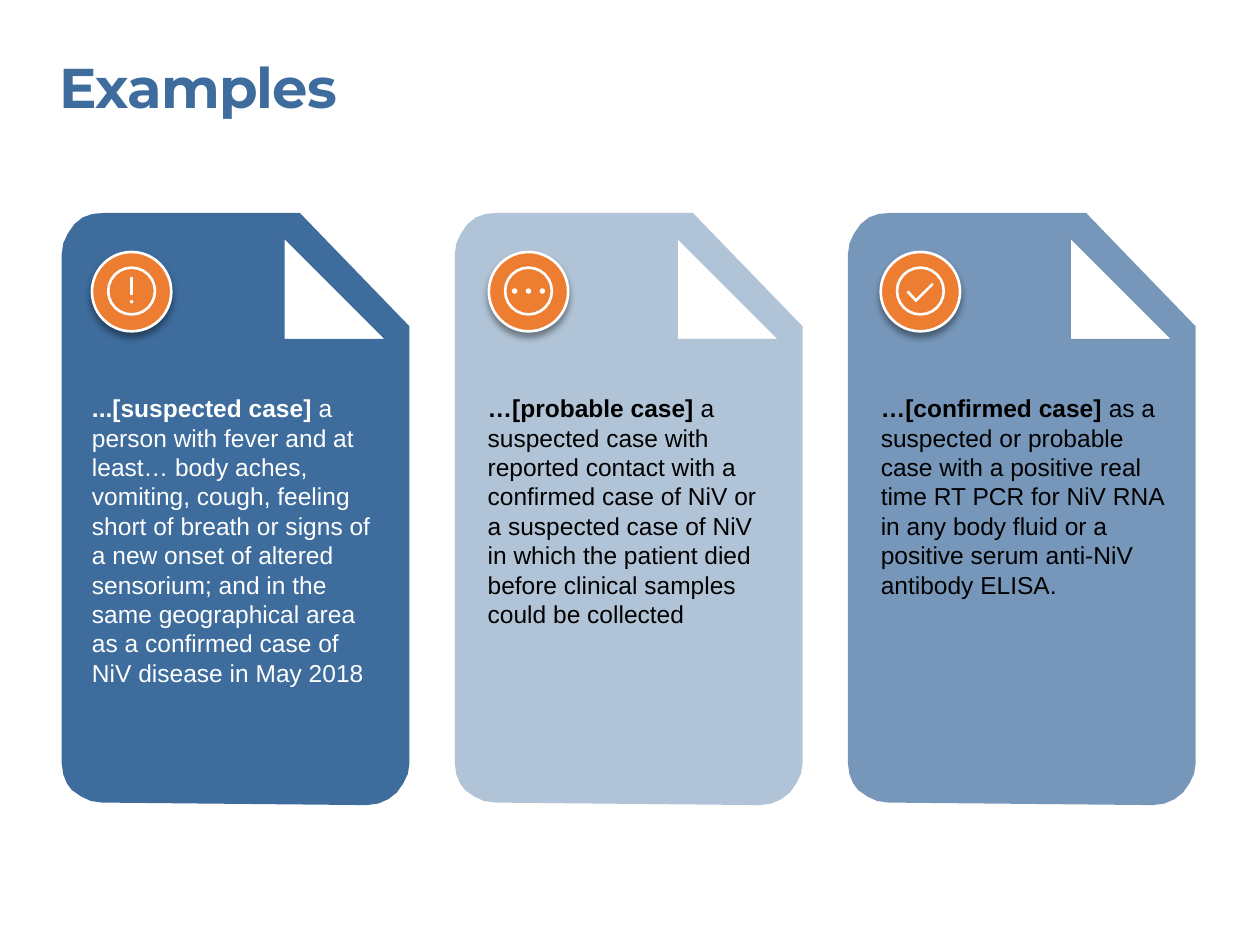
from dataclasses import dataclass
from math import cos, pi, sin

from lxml.etree import SubElement
from pptx import Presentation
from pptx.dml.color import RGBColor
from pptx.enum.shapes import MSO_SHAPE
from pptx.enum.text import MSO_ANCHOR, MSO_AUTO_SIZE, PP_ALIGN
from pptx.oxml.ns import qn
from pptx.util import Pt

PX = 9144


@dataclass(frozen=True)
class Theme:
    blue: RGBColor = RGBColor(0x3D, 0x6C, 0x9D)
    orange: RGBColor = RGBColor(0xED, 0x7D, 0x31)
    white: RGBColor = RGBColor(255, 255, 255)
    black: RGBColor = RGBColor(0, 0, 0)
    heading: str = "Montserrat"
    body: str = "Arial"
    title_size: int = 32
    body_size: int = 14


THEME = Theme()
CARD_LEFT, CARD_PITCH = 49, 312
BADGE_TOP, BADGE_SIZE = 200, 63

CARD_OUTLINE = [
    (32, 637),
    (22, 637, 16, 633, 8, 627), (4, 623, 0, 615, 0, 606),
    (0, 202),
    (0, 192, 4, 186, 10, 178), (16, 171, 24, 169, 34, 169),
    (189, 169), (276, 259), (276, 606),
    (276, 615, 272, 621, 266, 629), (260, 635, 252, 639, 242, 639),
]
FOLD = [(177, 269), (256, 269), (177, 190)]


def px(*values):
    return [round(v * PX) for v in values]


def circle(x, y, radius, steps):
    angles = [2 * pi * i / steps for i in range(steps)]
    return [(x + radius * cos(a), y + radius * sin(a)) for a in angles]


def flatten(segments, steps=3):
    points = []
    for seg in segments:
        if len(seg) == 2:
            points.append(seg)
            continue
        ctrl = [points[-1], seg[:2], seg[2:4], seg[4:]]
        for i in range(1, steps + 1):
            t = i / steps
            weights = ((1 - t) ** 3, 3 * t * (1 - t) ** 2, 3 * t * t * (1 - t), t ** 3)
            points.append(tuple(sum(w * c[k] for w, c in zip(weights, ctrl)) for k in (0, 1)))
    return points


RING = [circle(0, 0, radius, 24) for radius in (19.6, 17.5)]
EXCLAMATION = [[(-1.1, -11), (1.1, -11), (1.1, 3), (-1.1, 3)], circle(0, 8.5, 1.4, 8)]
ELLIPSIS = [circle(x, 0, 2.2, 8) for x in (-11, 0, 11)]
CHECK = [[(-3.5, 9), (10.5, -5), (9.3, -6.5), (-3.5, 6), (-9.5, -0.5), (-11, 1)]]

CASES = [
    {"alpha": 100, "color": THEME.white, "badge": 73, "text": 73, "height": 236,
     "glyph": EXCLAMATION, "term": "...[suspected case] ",
     "definition": "a person with fever and at least… body aches, vomiting, cough, "
                   "feeling short of breath or signs of a new onset of altered sensorium; "
                   "and in the same geographical area as a confirmed case of NiV disease "
                   "in May 2018"},
    {"alpha": 40, "color": THEME.black, "badge": 388, "text": 387, "height": 188,
     "glyph": ELLIPSIS, "term": "…[probable case] ",
     "definition": "a suspected case with reported contact with a confirmed case of NiV "
                   "or a suspected case of NiV in which the patient died before clinical "
                   "samples could be collected"},
    {"alpha": 70, "color": THEME.black, "badge": 699, "text": 699, "height": 165,
     "glyph": CHECK, "term": "…[confirmed case] ",
     "definition": "as a suspected or probable case with a positive real time RT PCR for "
                   "NiV RNA in any body fluid or a positive serum anti-NiV antibody ELISA."},
]


def set_fill(sp, color, alpha=100):
    sp.shadow.inherit = False
    sp.fill.solid()
    sp.fill.fore_color.rgb = color
    if alpha < 100:
        clr = sp.fill._xPr.find(qn("a:solidFill"))[0]
        SubElement(clr, qn("a:alpha"), val=str(alpha * 1000))


def add_outline(s, contours, x, y, color, alpha=100):
    contours = [[px(x + a, y + b) for a, b in c] for c in contours]
    builder = s.shapes.build_freeform(*contours[0][0])
    builder.add_line_segments(contours[0][1:], close=True)
    for contour in contours[1:]:
        builder.move_to(*contour[0])
        builder.add_line_segments(contour[1:], close=True)
    sp = builder.convert_to_shape()
    set_fill(sp, color, alpha)
    sp.line.fill.background()


def set_frame(tf):
    margins = dict.fromkeys(("margin_left", "margin_top", "margin_right", "margin_bottom"), 0)
    values = {"word_wrap": True, "auto_size": MSO_AUTO_SIZE.NONE,
              "vertical_anchor": MSO_ANCHOR.TOP, **margins}
    for name, value in values.items():
        setattr(tf, name, value)


def add_run(p, text, color, **formats):
    r = p.add_run()
    r.text = text
    r.font.color.rgb = color
    for name, value in formats.items():
        setattr(r.font, name, value)
    return r


def set_title(s, text):
    sp = s.shapes.title
    sp.left, sp.top, sp.width, sp.height = px(47, 42, 810, 54)
    set_frame(sp.text_frame)
    p = sp.text_frame.paragraphs[0]
    p.alignment = PP_ALIGN.LEFT
    r = add_run(p, text, THEME.blue, name=THEME.heading, size=Pt(THEME.title_size), bold=True)
    r.font._element.set("spc", "-50")


def add_definition(s, case):
    sp = s.shapes.add_textbox(*px(case["text"], 312, 228, case["height"]))
    set_frame(sp.text_frame)
    p = sp.text_frame.paragraphs[0]
    for part, bold in (("term", True), ("definition", False)):
        add_run(p, case[part], case["color"],
                name=THEME.body, size=Pt(THEME.body_size), bold=bold)


def add_badge(s, left, glyph):
    sp = s.shapes.add_shape(MSO_SHAPE.OVAL, *px(left, BADGE_TOP, BADGE_SIZE, BADGE_SIZE))
    set_fill(sp, THEME.orange)
    sp.line.color.rgb = THEME.white
    sp.line.width = Pt(1.5)
    effects = sp._element.spPr.find(qn("a:effectLst"))
    shadow = SubElement(effects, qn("a:outerShdw"), blurRad=str(Pt(4)), dist=str(Pt(3)),
                        dir="5400000", algn="t", rotWithShape="0")
    clr = SubElement(shadow, qn("a:srgbClr"), val=str(THEME.black))
    SubElement(clr, qn("a:alpha"), val="40000")
    half = BADGE_SIZE / 2
    add_outline(s, RING + glyph, left + half, BADGE_TOP + half - 0.5, THEME.white)


def main():
    prs = Presentation()
    prs.slide_width, prs.slide_height = px(1000, 750)
    s = prs.slides.add_slide(prs.slide_layouts[5])
    card = [flatten(CARD_OUTLINE), FOLD]
    for i, case in enumerate(CASES):
        add_outline(s, card, CARD_LEFT + i * CARD_PITCH, 0, THEME.blue, case["alpha"])
    set_title(s, "Examples")
    for case in CASES:
        add_definition(s, case)
    for case in CASES:
        add_badge(s, case["badge"], case["glyph"])
    prs.save("out.pptx")


if __name__ == "__main__":
    main()
